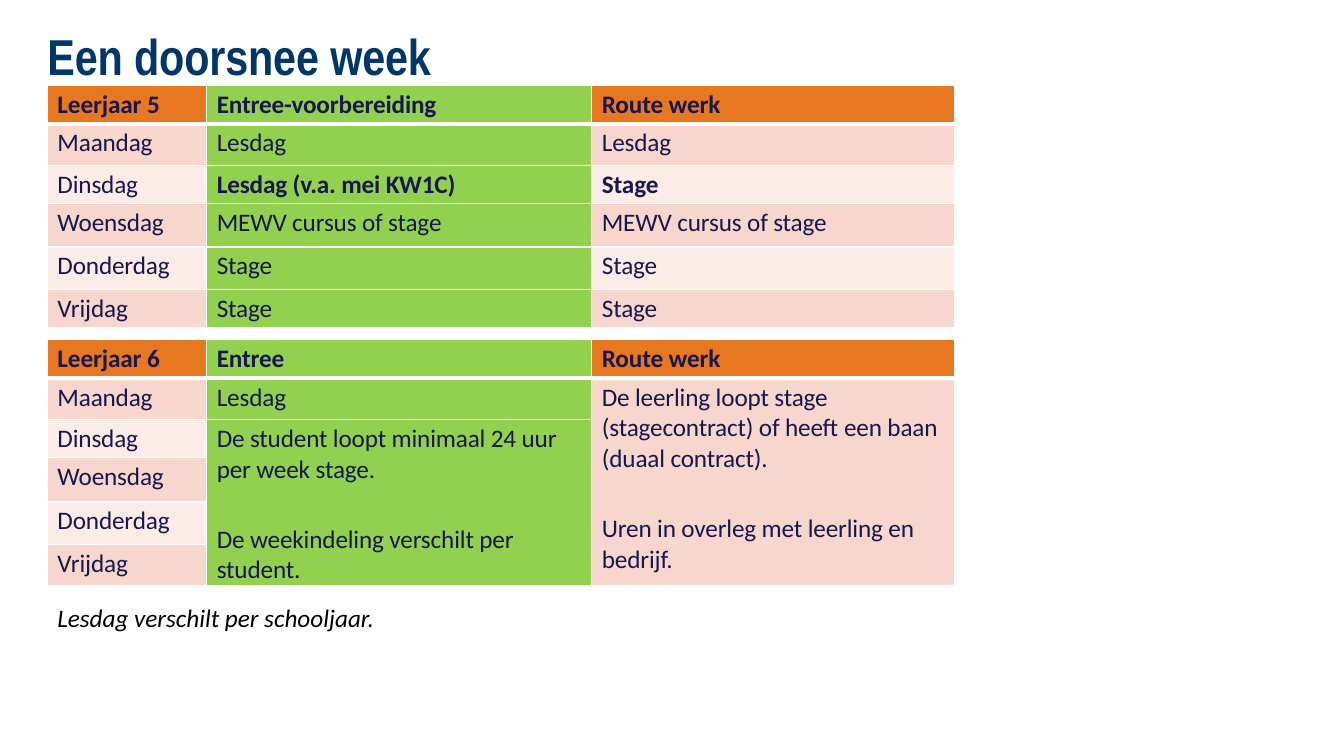
from lxml import etree
from pptx import Presentation
from pptx.dml.color import RGBColor
from pptx.enum.text import MSO_ANCHOR, MSO_AUTO_SIZE, PP_ALIGN
from pptx.oxml.ns import qn
from pptx.util import Inches, Pt

LEFT, MIDDLE = PP_ALIGN.LEFT, MSO_ANCHOR.MIDDLE
NO_AUTOFIT = MSO_AUTO_SIZE.NONE

NAVY = RGBColor(0x00, 0x36, 0x68)
INK = RGBColor(0x18, 0x18, 0x4D)
BLACK = RGBColor(0x00, 0x00, 0x00)
WHITE = RGBColor(0xFF, 0xFF, 0xFF)
ORANGE = RGBColor(0xE8, 0x77, 0x22)
GREEN = RGBColor(0x92, 0xD0, 0x50)
PINK = RGBColor(0xF6, 0xD6, 0xCD)
PALE_PINK = RGBColor(0xFB, 0xEC, 0xE8)

COLUMN_WIDTHS = [1.58, 3.82, 3.6]
DAYS = ["Maandag", "Dinsdag", "Woensdag", "Donderdag", "Vrijdag"]

YEAR_5 = [
    ["Leerjaar 5", "Entree-voorbereiding", "Route werk"],
    [DAYS[0], "Lesdag", "Lesdag"],
    [DAYS[1], "Lesdag (v.a. mei KW1C)", "Stage"],
    [DAYS[2], "MEWV cursus of stage", "MEWV cursus of stage"],
    [DAYS[3], "Stage", "Stage"],
    [DAYS[4], "Stage", "Stage"],
]
YEAR_5_BOLD = {(2, 1), (2, 2)}

WORK_ROUTE = ("De leerling loopt stage (stagecontract) of heeft een baan (duaal contract).\n"
              "Uren in overleg met leerling en bedrijf.")
ENTRY_ROUTE = ("De student loopt minimaal 24 uur per week stage.\n"
               "De weekindeling verschilt per student.")
YEAR_6 = [
    ["Leerjaar 6", "Entree", "Route werk"],
    [DAYS[0], "Lesdag", WORK_ROUTE],
    [DAYS[1], ENTRY_ROUTE, ""],
    [DAYS[2], "", ""],
    [DAYS[3], "", ""],
    [DAYS[4], "", ""],
]
YEAR_6_MERGES = [((1, 2), (5, 2)), ((2, 1), (5, 1))]


def format_runs(paragraph, font_name, size, color, bold=False, italic=False, tight=True):
    for run in paragraph.runs:
        font = run.font
        font.name, font.size = font_name, Pt(size)
        font.bold, font.italic = bold, italic
        font.color.rgb = color
        if tight:
            run._r.get_or_add_rPr().set("spc", "-10")


def set_borders(cell, top=1, bottom=1):
    """Draw white cell borders; widths are in points."""
    properties = cell._tc.get_or_add_tcPr()
    widths = {"a:lnL": 1, "a:lnR": 1, "a:lnT": top, "a:lnB": bottom}
    for index, (tag, width) in enumerate(widths.items()):
        line = etree.Element(qn(tag), w=str(Pt(width)))
        fill = etree.SubElement(line, qn("a:solidFill"))
        etree.SubElement(fill, qn("a:srgbClr"), val=str(WHITE))
        properties.insert(index, line)


def cell_color(row, column):
    if column == 1:
        return GREEN
    if row == 0:
        return ORANGE
    return PINK if row % 2 else PALE_PINK


def add_title(slide, left, top, width, height):
    title = slide.shapes.title
    title.left, title.top = Inches(left), Inches(top)
    title.width, title.height = Inches(width), Inches(height)
    frame = title.text_frame
    frame.text = "Een doorsnee week"
    frame.auto_size = NO_AUTOFIT
    frame.vertical_anchor = MIDDLE
    frame.margin_left = frame.margin_right = frame.margin_bottom = 0
    frame.margin_top = Inches(0.01)
    frame.paragraphs[0].alignment = LEFT
    format_runs(frame.paragraphs[0], "Arial Narrow", 36, NAVY, bold=True)


def add_week_table(slide, left, top, rows, row_heights, bold_cells=(), merges=()):
    table = slide.shapes.add_table(
        len(rows), len(COLUMN_WIDTHS), Inches(left), Inches(top),
        Inches(sum(COLUMN_WIDTHS)), Inches(sum(row_heights))).table
    table.first_row = table.horz_banding = False
    for column, width in zip(table.columns, COLUMN_WIDTHS):
        column.width = Inches(width)
    for row, height in zip(table.rows, row_heights):
        row.height = Inches(height)

    # Cells
    for row, texts in enumerate(rows):
        for column, text in enumerate(texts):
            cell = table.cell(row, column)
            cell.margin_left, cell.margin_top = Inches(0.1), Inches(0.04)
            cell.margin_right = cell.margin_bottom = 0
            cell.fill.solid()
            cell.fill.fore_color.rgb = cell_color(row, column)
            set_borders(cell, top=3 if row == 1 else 1, bottom=3 if row == 0 else 1)
            cell.text_frame.text = text
            bold = row == 0 or (row, column) in bold_cells
            for index, paragraph in enumerate(cell.text_frame.paragraphs):
                paragraph.font.size = Pt(18)
                if index:
                    paragraph.space_before = Pt(28)
                format_runs(paragraph, "Calibri", 18, INK, bold=bold)

    # Texts that cover several days
    for first, last in merges:
        table.cell(*first).merge(table.cell(*last))


def add_note(slide, left, top, width, height):
    note = slide.shapes.add_textbox(Inches(left), Inches(top), Inches(width), Inches(height))
    frame = note.text_frame
    frame.text = "Lesdag verschilt per schooljaar."
    frame.word_wrap = False
    format_runs(frame.paragraphs[0], "Calibri", 18, BLACK, italic=True, tight=False)


def main():
    presentation = Presentation()
    presentation.slide_width, presentation.slide_height = Inches(13.33), Inches(7.5)
    slide = presentation.slides.add_slide(presentation.slide_layouts[5])
    left = 0.47
    add_title(slide, left, 0.23, 5.8, 0.62)
    add_week_table(slide, left, 0.85, YEAR_5, [0.38, 0.41, 0.38, 0.43, 0.42, 0.38],
                   bold_cells=YEAR_5_BOLD)
    add_week_table(slide, left, 3.37, YEAR_6, [0.38, 0.41, 0.38, 0.44, 0.42, 0.38],
                   merges=YEAR_6_MERGES)
    add_note(slide, left, 5.93, 3.75, 0.4)
    presentation.save("out.pptx")


if __name__ == "__main__":
    main()
